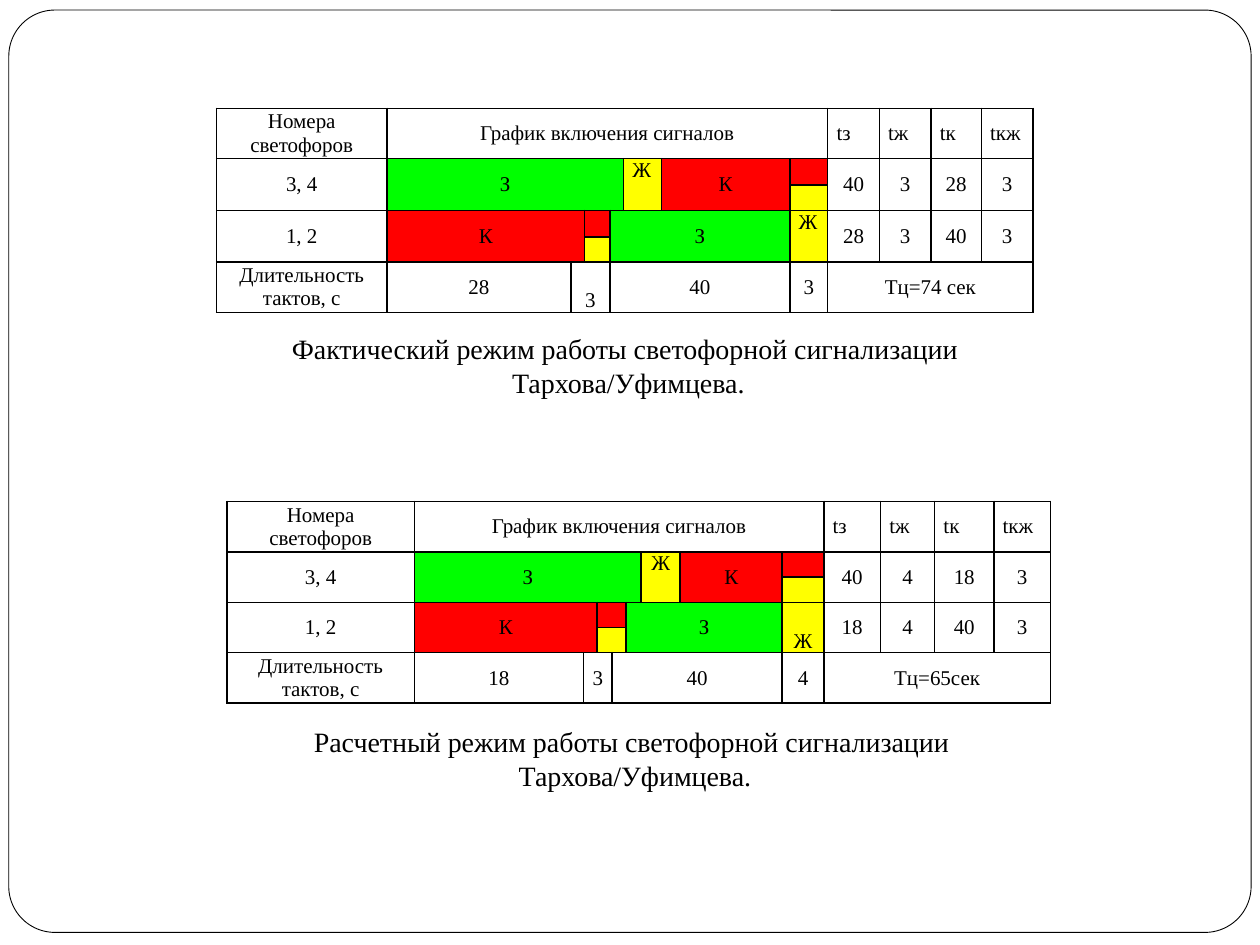
from lxml import etree
from pptx import Presentation
from pptx import util as u
from pptx.dml.color import RGBColor
from pptx.enum import shapes, text
from pptx.oxml.ns import qn

GREEN, YELLOW, RED = "00FF00", "FFFF00", "FF0000"
LEFT, CENTER = text.PP_ALIGN.LEFT, text.PP_ALIGN.CENTER
TOP, MIDDLE, BOTTOM = (text.MSO_ANCHOR.TOP, text.MSO_ANCHOR.MIDDLE,
                       text.MSO_ANCHOR.BOTTOM)


def color(hex_code):
    return RGBColor.from_string(hex_code)


def write(paragraph, words, size=12, align=CENTER, ink="000000"):
    paragraph.alignment = align
    run = paragraph.add_run()
    run.text = words
    run.font.name = "Times New Roman"
    run.font.size = u.Pt(size)
    run.font.color.rgb = color(ink)


class SignalSlide:
    ink = "000000"
    paper = "FFFFFF"
    inset = u.Inches(0.07)

    def __init__(self, slide):
        self.slide = slide

    def frame(self, left, top, width, height):
        border = self.slide.shapes.add_shape(
            shapes.MSO_SHAPE.ROUNDED_RECTANGLE,
            *map(u.Inches, (left, top, width, height)))
        border.adjustments[0] = 0.05
        border.shadow.inherit = False
        border.fill.solid()
        border.fill.fore_color.rgb = color(self.paper)
        border.line.color.rgb = color(self.ink)
        border.line.width = u.Pt(0.5)

    def caption(self, left, top, lines):
        box = self.slide.shapes.add_textbox(
            *map(u.Inches, (left, top, 6.48, 0.64)))
        frame = box.text_frame
        frame.word_wrap = True
        frame.vertical_anchor = MIDDLE
        frame.auto_size = text.MSO_AUTO_SIZE.SHAPE_TO_FIT_TEXT
        for number, line in enumerate(lines):
            paragraph = frame.add_paragraph() if number else frame.paragraphs[0]
            write(paragraph, line, size=16)

    def prepare_cell(self, cell):
        """Black borders, no fill, and small empty text so rows stay low."""
        properties = cell._tc.get_or_add_tcPr()
        for side in ("a:lnL", "a:lnR", "a:lnT", "a:lnB"):
            line = etree.SubElement(properties, qn(side), w=str(u.Pt(1)))
            fill = etree.SubElement(line, qn("a:solidFill"))
            etree.SubElement(fill, qn("a:srgbClr"), val=self.ink)
        cell.fill.background()
        cell.margin_left = cell.margin_right = self.inset
        cell.margin_top = cell.margin_bottom = 0
        cell.vertical_anchor = MIDDLE
        paragraph = cell.text_frame.paragraphs[0]._p
        etree.SubElement(paragraph, qn("a:endParaRPr"), sz="600")

    def cell(self, table, row, column, words="", rows=1, columns=1,
             fill=None, align=CENTER, anchor=MIDDLE):
        cell = table.cell(row, column)
        if rows * columns > 1:
            cell.merge(table.cell(row + rows - 1, column + columns - 1))
        if fill:
            cell.fill.solid()
            cell.fill.fore_color.rgb = color(fill)
        cell.vertical_anchor = anchor
        if words:
            write(cell.text_frame.paragraphs[0], words, align=align)

    def signal_table(self, left, top, widths, heights, signals, times, cycle):
        graphic = self.slide.shapes.add_table(
            len(heights), len(widths), u.Inches(left), u.Inches(top),
            u.Inches(sum(widths)), u.Inches(sum(heights)))
        table = graphic.table
        table.first_row = table.horz_banding = False
        for column, width in zip(table.columns, widths):
            column.width = u.Inches(width)
        for row, height in zip(table.rows, heights):
            row.height = u.Inches(height)
        for cell in table.iter_cells():
            self.prepare_cell(cell)

        # Header and row labels
        first_time = len(widths) - 4
        self.cell(table, 0, 0, "Номера светофоров")
        self.cell(table, 0, 1, "График включения сигналов",
                  columns=first_time - 1)
        for offset, name in enumerate(("tз", "tж", "tк", "tкж")):
            self.cell(table, 0, first_time + offset, name, align=LEFT)
        self.cell(table, 1, 0, "3, 4", rows=2)
        self.cell(table, 3, 0, "1, 2", rows=2)
        self.cell(table, 5, 0, "Длительность тактов, с")

        # Signal bars and phase lengths
        for row, column, words, options in signals:
            self.cell(table, row, column, words, **options)

        # Signal times and cycle length
        for row, values in zip((1, 3), times):
            for offset, value in enumerate(values):
                self.cell(table, row, first_time + offset, value, rows=2)
        self.cell(table, 5, first_time, cycle, columns=4)


def bar(fill, columns=1, rows=2, **options):
    return dict(fill=fill, columns=columns, rows=rows, **options)


def main():
    deck = Presentation()
    deck.slide_width, deck.slide_height = u.Inches(10), u.Inches(7.5)
    page = SignalSlide(deck.slides.add_slide(deck.slide_layouts[6]))
    page.frame(0.07, 0.08, 9.86, 7.32)

    # Actual mode
    page.signal_table(
        1.72, 0.86,
        [1.35, 1.46, 0.11, 0.2, 0.11, 0.3, 1.02, 0.3, 0.41, 0.41, 0.4, 0.41],
        [0.4, 0.21, 0.2, 0.21, 0.2, 0.4],
        [(1, 1, "З", bar(GREEN, 4)),
         (1, 5, "Ж", bar(YELLOW, align=LEFT, anchor=TOP)),
         (1, 6, "К", bar(RED)),
         (1, 7, "", bar(RED, rows=1)),
         (2, 7, "", bar(YELLOW, rows=1)),
         (3, 1, "К", bar(RED, 2)),
         (3, 3, "", bar(RED, rows=1)),
         (4, 3, "", bar(YELLOW, rows=1)),
         (3, 4, "З", bar(GREEN, 3)),
         (3, 7, "Ж", bar(YELLOW, align=LEFT, anchor=TOP)),
         (5, 1, "28", {}),
         (5, 2, "3", dict(columns=2, anchor=BOTTOM)),
         (5, 4, "40", dict(columns=3)),
         (5, 7, "3", {})],
        [("40", "3", "28", "3"), ("28", "3", "40", "3")], "Tц=74 сек")
    page.caption(1.72, 2.58,
                 ["Фактический режим работы светофорной сигнализации",
                  " Тархова/Уфимцева."])

    # Calculated mode
    page.signal_table(
        1.8, 3.98,
        [1.49, 1.34, 0.11, 0.12, 0.11, 0.12, 0.31, 0.81, 0.33,
         0.45, 0.43, 0.47, 0.45],
        [0.4, 0.2, 0.2, 0.2, 0.2, 0.4],
        [(1, 1, "З", bar(GREEN, 5)),
         (1, 6, "Ж", bar(YELLOW, anchor=TOP)),
         (1, 7, "К", bar(RED)),
         (1, 8, "", bar(RED, rows=1)),
         (2, 8, "", bar(YELLOW, rows=1)),
         (3, 1, "К", bar(RED, 2)),
         (3, 3, "", bar(RED, 2, rows=1)),
         (4, 3, "", bar(YELLOW, 2, rows=1)),
         (3, 5, "З", bar(GREEN, 3)),
         (3, 8, "Ж", bar(YELLOW, anchor=BOTTOM)),
         (5, 1, "18", {}),
         (5, 2, "3", dict(columns=2)),
         (5, 4, "40", dict(columns=4)),
         (5, 8, "4", {})],
        [("40", "4", "18", "3"), ("18", "4", "40", "3")], "Tц=65сек")
    page.caption(1.8, 5.7,
                 ["Расчетный режим работы светофорной сигнализации ",
                  "Тархова/Уфимцева."])

    deck.save("out.pptx")


if __name__ == "__main__":
    main()
